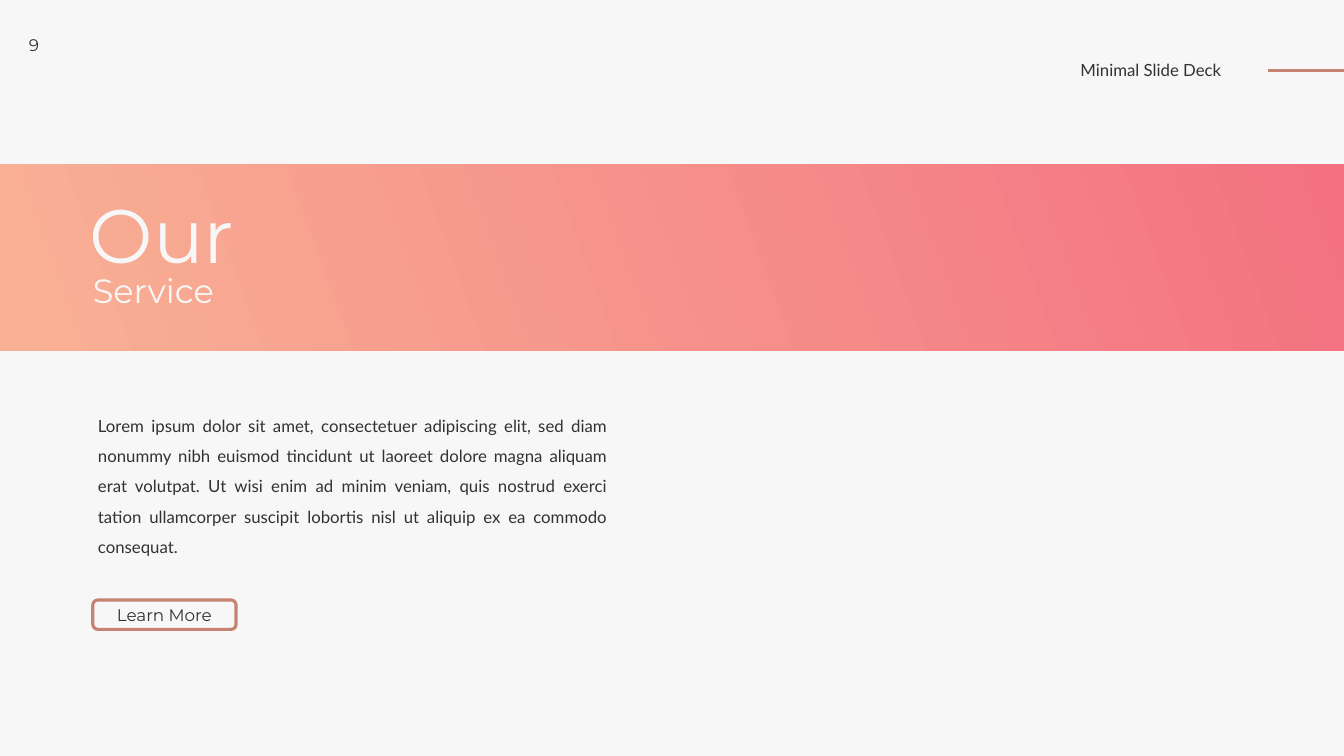
from lxml import etree
from pptx import Presentation
from pptx import util as u
from pptx.dml.color import RGBColor
from pptx.enum import shapes, text
from pptx.oxml import ns

PAGE_NUMBER = "9"
TAGLINE = "Minimal Slide Deck"
HEADING = "Our"
SUBHEADING = "Service"
BODY = (
    "Lorem ipsum dolor sit amet, consectetuer adipiscing elit, sed diam nonummy nibh "
    "euismod tincidunt ut laoreet dolore magna aliquam erat volutpat. Ut wisi enim ad "
    "minim veniam, quis nostrud exerci tation ullamcorper suscipit lobortis nisl ut "
    "aliquip ex ea commodo consequat."
)
BUTTON = "Learn More"

THEME = {
    "paper": RGBColor.from_string("F7F7F7"),
    "ink": RGBColor.from_string("323232"),
    "accent": RGBColor.from_string("C68372"),
    "band": [RGBColor.from_string("F47181"), RGBColor.from_string("F8B195")],
    "display": "Montserrat",
    "reading": "Lato",
    "small": u.Pt(12),
    "medium": u.Pt(24),
    "large": u.Pt(54),
    "stroke": u.Pt(2.25),
}
WIDTH, HEIGHT = 33.87, 19.05
RULE_LEFT, RULE_Y = 31.95, 1.78
BAND_TOP, BAND_HEIGHT = 4.14, 4.7


def box(left, top, width, height):
    return u.Cm(left), u.Cm(top), u.Cm(width), u.Cm(height)


def write(holder, words, size="small", font="display", color="ink",
          align="LEFT", spacing=1.0, inset=0.13, anchor="TOP"):
    frame = holder.text_frame
    frame.word_wrap = True
    frame.margin_top = frame.margin_bottom = u.Cm(inset)
    frame.vertical_anchor = text.MSO_ANCHOR[anchor]
    line = frame.paragraphs[0]
    line.alignment = text.PP_ALIGN[align]
    line.line_spacing = spacing
    run = line.add_run()
    run.text = words
    run.font.name = THEME[font]
    run.font.size = THEME[size]
    run.font.color.rgb = THEME[color]


def main():
    deck = Presentation()
    deck.slide_width, deck.slide_height = u.Cm(WIDTH), u.Cm(HEIGHT)
    slide = deck.slides.add_slide(deck.slide_layouts[6])
    slide.background.fill.solid()
    slide.background.fill.fore_color.rgb = THEME["paper"]
    parts = slide.shapes

    write(parts.add_textbox(*box(0.07, 0.88, 1.57, 0.51)), PAGE_NUMBER,
          align="CENTER", inset=0)
    write(parts.add_textbox(*box(26.98, 1.37, 5.03, 0.76)), TAGLINE, font="reading")

    rule = parts.add_connector(shapes.MSO_CONNECTOR.STRAIGHT, u.Cm(WIDTH), u.Cm(RULE_Y),
                               u.Cm(RULE_LEFT), u.Cm(RULE_Y))
    rule.line.color.rgb = THEME["accent"]
    rule.line.width = THEME["stroke"]
    etree.SubElement(rule._element.spPr, ns.qn("a:effectLst"))

    band = parts.add_shape(shapes.MSO_SHAPE.RECTANGLE,
                           *box(0, BAND_TOP, WIDTH, BAND_HEIGHT))
    band.shadow.inherit = False
    band.line.fill.background()
    band.fill.gradient()
    band.fill.gradient_angle = 200
    for stop, color in zip(band.fill.gradient_stops, THEME["band"]):
        stop.color.rgb = color

    write(parts.add_textbox(*box(2.01, 4.6, 10.34, 2.57)), HEADING,
          size="large", color="paper")
    write(parts.add_textbox(*box(2.09, 6.68, 10.26, 1.27)), SUBHEADING,
          size="medium", color="paper")
    write(parts.add_textbox(*box(2.22, 10.09, 13.34, 4.01)), BODY,
          font="reading", align="JUSTIFY", spacing=1.5)

    button = parts.add_shape(shapes.MSO_SHAPE.ROUNDED_RECTANGLE,
                             *box(2.34, 15.12, 3.61, 0.74))
    button.shadow.inherit = False
    button.fill.background()
    button.line.color.rgb = THEME["accent"]
    button.line.width = THEME["stroke"]
    write(button, BUTTON, align="CENTER", inset=0, anchor="MIDDLE")

    deck.save("out.pptx")


if __name__ == "__main__":
    main()
